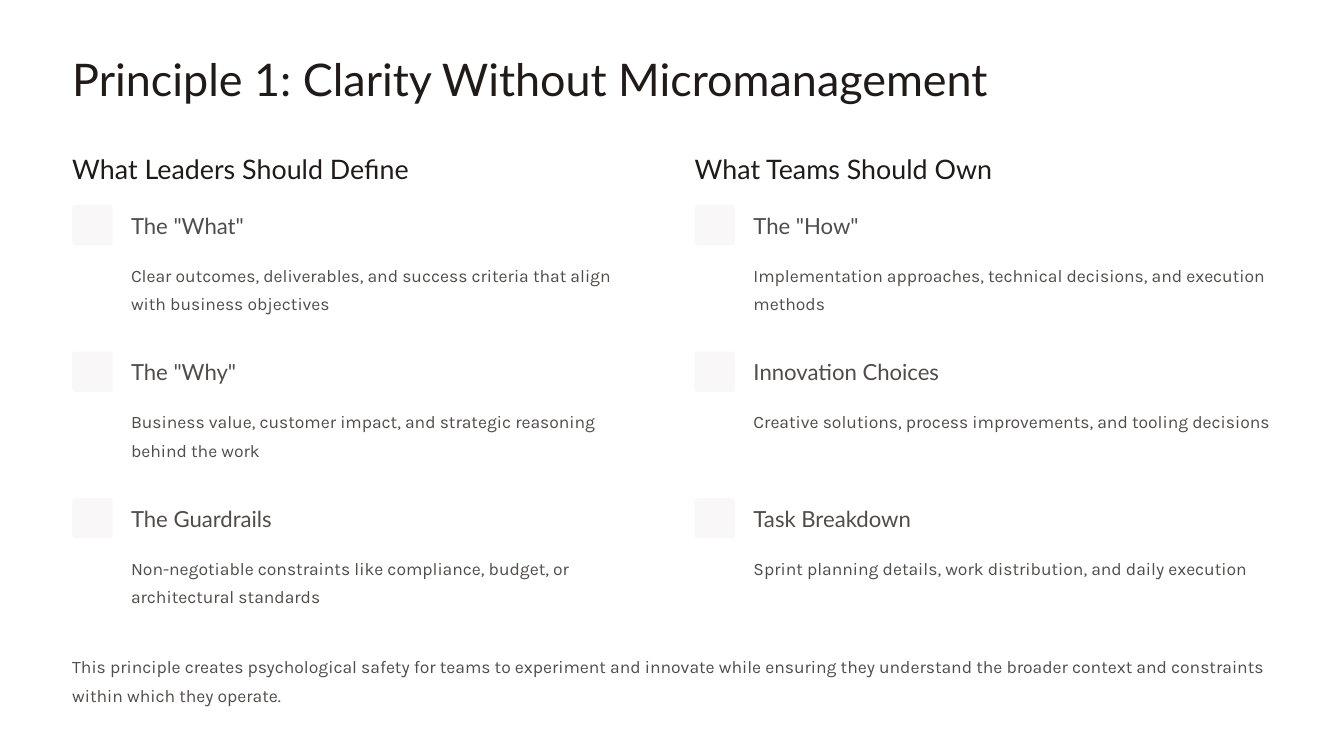
from dataclasses import dataclass

from pptx import Presentation
from pptx.dml.color import RGBColor
from pptx.enum.shapes import MSO_SHAPE
from pptx.enum.text import MSO_ANCHOR, MSO_AUTO_SIZE, PP_ALIGN
from pptx.util import Inches, Pt


@dataclass(frozen=True)
class TextStyle:
    font: str
    size: float
    leading: float
    color: RGBColor


class Theme:
    background = RGBColor(0xFF, 0xFF, 0xFF)
    marker = RGBColor(0xF9, 0xF7, 0xF7)
    ink = RGBColor(0x20, 0x1B, 0x18)
    soft_ink = RGBColor(0x50, 0x4C, 0x49)
    title = TextStyle("Lato", 38.5, 48, ink)
    heading = TextStyle("Lato", 23, 29, ink)
    topic = TextStyle("Lato", 19, 24, soft_ink)
    body = TextStyle("Karla", 15, 24.5, soft_ink)


# Layout in inches
LEFT = 0.86
COLUMN_STEP = 7.41
FIRST_ROW = 2.44
ROW_STEP = 1.745
MARKER_SIZE = 0.48
TEXT_INDENT = 0.7

TITLE = "Principle 1: Clarity Without Micromanagement"
COLUMNS = [
    ("What Leaders Should Define", [
        ('The "What"', "Clear outcomes, deliverables, and success criteria "
                       "that align with business objectives"),
        ('The "Why"', "Business value, customer impact, and strategic "
                      "reasoning behind the work"),
        ("The Guardrails", "Non-negotiable constraints like compliance, "
                           "budget, or architectural standards"),
    ]),
    ("What Teams Should Own", [
        ('The "How"', "Implementation approaches, technical decisions, "
                      "and execution methods"),
        ("Innovation Choices", "Creative solutions, process improvements, "
                               "and tooling decisions"),
        ("Task Breakdown", "Sprint planning details, work distribution, "
                           "and daily execution"),
    ]),
]
CONCLUSION = ("This principle creates psychological safety for teams to "
              "experiment and innovate while ensuring they understand the "
              "broader context and constraints within which they operate.")


def write_text(frame, text, *, style, wrap=True):
    frame.margin_left = frame.margin_right = 0
    frame.margin_top = frame.margin_bottom = 0
    frame.auto_size = MSO_AUTO_SIZE.NONE
    frame.vertical_anchor = MSO_ANCHOR.TOP
    frame.word_wrap = wrap
    paragraph = frame.paragraphs[0]
    paragraph.alignment = PP_ALIGN.LEFT
    paragraph.line_spacing = Pt(style.leading)
    run = paragraph.add_run()
    run.text = text
    run.font.name = style.font
    run.font.size = Pt(style.size)
    run.font.color.rgb = style.color


def add_text(slide, text, left, top, width, height, **text_format):
    box = slide.shapes.add_textbox(
        Inches(left), Inches(top), Inches(width), Inches(height))
    write_text(box.text_frame, text, **text_format)


def add_title(slide, text):
    title = slide.shapes.title
    title.left, title.top = Inches(LEFT), Inches(0.59)
    title.width, title.height = Inches(12.29), Inches(0.67)
    write_text(title.text_frame, text, style=Theme.title, wrap=False)


def add_marker(slide, left, top):
    marker = slide.shapes.add_shape(
        MSO_SHAPE.ROUNDED_RECTANGLE, Inches(left), Inches(top),
        Inches(MARKER_SIZE), Inches(MARKER_SIZE))
    marker.adjustments[0] = 0.07
    marker.shadow.inherit = False
    marker.fill.solid()
    marker.fill.fore_color.rgb = Theme.marker
    marker.line.fill.background()


def add_topic(slide, topic, description, left, top):
    add_marker(slide, left, top)
    text_left = left + TEXT_INDENT
    add_text(slide, topic, text_left, top + 0.07, 2.69, 0.34,
             style=Theme.topic, wrap=False)
    add_text(slide, description, text_left, top + 0.62, 6.18, 0.69,
             style=Theme.body)


def add_column(slide, heading, topics, left):
    add_text(slide, heading, left, 1.8, 4.52, 0.4,
             style=Theme.heading, wrap=False)
    for row, (topic, description) in enumerate(topics):
        add_topic(slide, topic, description, left, FIRST_ROW + row * ROW_STEP)


def main():
    deck = Presentation()
    deck.slide_width, deck.slide_height = Inches(16), Inches(9)
    title_only = deck.slide_layouts[5]
    slide = deck.slides.add_slide(title_only)
    slide.background.fill.solid()
    slide.background.fill.fore_color.rgb = Theme.background

    add_title(slide, TITLE)

    # Leaders on the left, teams on the right
    for index, (heading, topics) in enumerate(COLUMNS):
        add_column(slide, heading, topics, LEFT + index * COLUMN_STEP)

    # Closing statement
    add_text(slide, CONCLUSION, LEFT, 7.72, 14.28, 0.69, style=Theme.body)

    deck.save("out.pptx")


if __name__ == "__main__":
    main()
